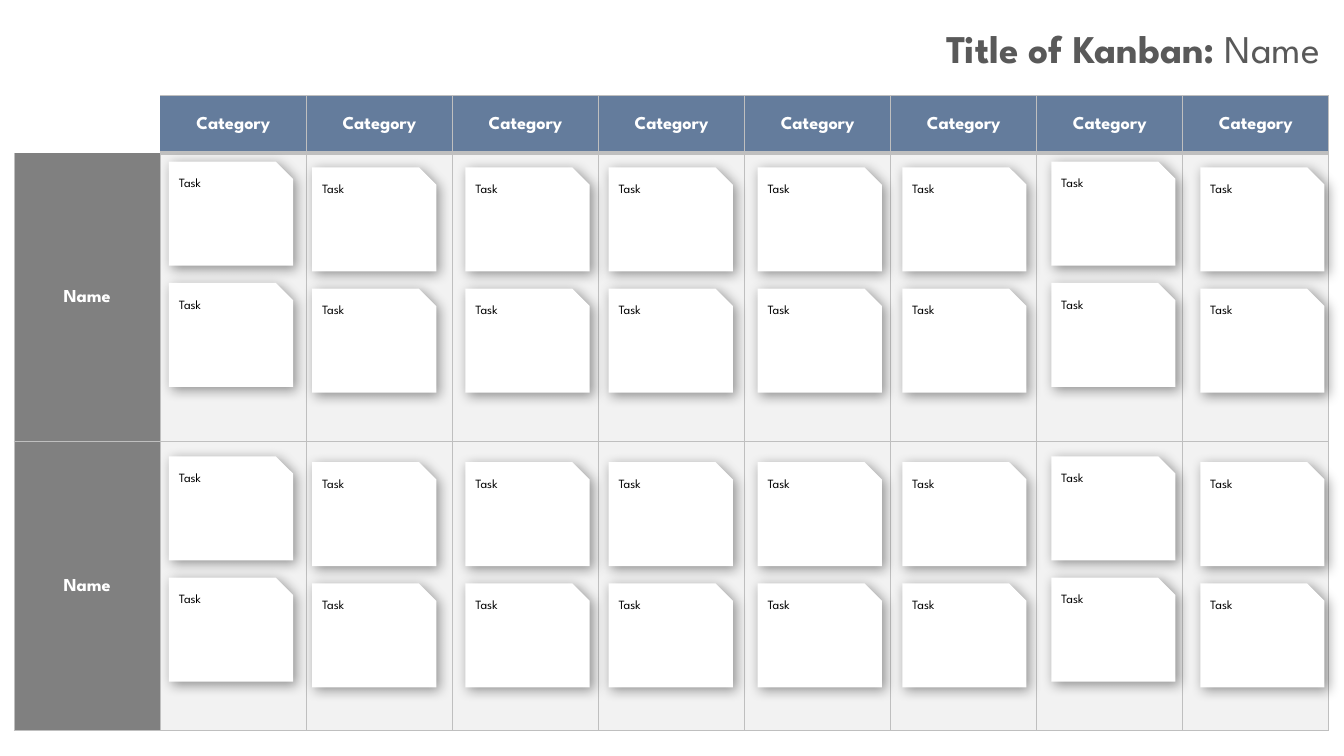
from dataclasses import dataclass

from lxml.etree import SubElement
from pptx import Presentation
from pptx.dml.color import RGBColor
from pptx.enum.shapes import MSO_SHAPE
from pptx.enum.text import MSO_ANCHOR, MSO_AUTO_SIZE, PP_ALIGN
from pptx.oxml.ns import qn
from pptx.util import Inches, Pt

COLORS = {
    "header": "647C9C",
    "name": "808080",
    "lane": "F2F2F2",
    "border": "BFBFBF",
    "title": "595959",
    "white": "FFFFFF",
    "black": "000000",
}
FONT = "League Spartan"
CATEGORIES = ["Category"] * 8
LANES = ["Name"] * 2
TASKS = ["Task"] * 2

HEADER_SHARE = 0.09  # of the board height
# Card measures are shares of a column's width or a lane's height.
CARD_WIDTH, CARD_HEIGHT, CARD_PITCH = 0.85, 0.36, 0.42
CARD_INDENTS = [0.06, 0.04, 0.09, 0.07, 0.09, 0.08, 0.10, 0.12]
CARD_DROPS = [0.03, 0.05, 0.05, 0.05, 0.05, 0.05, 0.03, 0.05]
LANE_DROP = 0.02


@dataclass
class Box:
    left: float
    top: float
    width: float
    height: float

    def inner_box(self, left, top, width, height):
        """Return the box covering the given shares of this one."""
        return Box(self.left + left * self.width, self.top + top * self.height,
                   width * self.width, height * self.height)

    def inches(self):
        return [Inches(value) for value in (self.left, self.top, self.width, self.height)]


def rgb(name):
    return RGBColor.from_string(COLORS[name])


def set_format(target, values):
    for name, value in values.items():
        setattr(target, name, value)


def add_run(paragraph, text, color, **font_values):
    run = paragraph.add_run()
    run.text = text
    set_format(run.font, {"name": FONT, **font_values})
    run.font.color.rgb = rgb(color)


def add_title(slide, box):
    text_box = slide.shapes.add_textbox(*box.inches())
    set_format(text_box.text_frame, {"word_wrap": True,
                                     "auto_size": MSO_AUTO_SIZE.SHAPE_TO_FIT_TEXT})
    paragraph = text_box.text_frame.paragraphs[0]
    paragraph.alignment = PP_ALIGN.RIGHT
    add_run(paragraph, "Title of Kanban: ", "title", size=Pt(28), bold=True)
    add_run(paragraph, "Name", "title", size=Pt(28), bold=False)


def border_widths(row, column):
    """Return the point width of each edge; zero leaves the edge open."""
    if row == column == 0:
        return {"L": 0, "R": 0, "T": 0, "B": 0}
    return {
        "L": 0 if (row, column) == (0, 1) else 1,
        "R": 1,
        "T": {0: 1, 1: 3 if column else 0}.get(row, 1),
        "B": 3 if row == 0 else 1,
    }


def set_borders(cell, widths):
    properties = cell._tc.get_or_add_tcPr()
    for side, width in widths.items():
        line = SubElement(properties, qn(f"a:ln{side}"), w=str(Pt(width)))
        if width:
            fill = SubElement(line, qn("a:solidFill"))
            SubElement(fill, qn("a:srgbClr"), val=COLORS["border"])
        else:
            SubElement(line, qn("a:noFill"))


def fill_cell(cell, text, color):
    cell.fill.solid()
    cell.fill.fore_color.rgb = rgb(color)
    if text:
        set_format(cell, {"vertical_anchor": MSO_ANCHOR.MIDDLE,
                          "margin_left": Inches(0.01), "margin_right": Inches(0.01),
                          "margin_top": Inches(0.01), "margin_bottom": 0})
        paragraph = cell.text_frame.paragraphs[0]
        paragraph.alignment = PP_ALIGN.CENTER
        add_run(paragraph, text, "white", size=Pt(13), bold=True)


def add_board(slide, box):
    rows = [[("", "white")] + [(category, "header") for category in CATEGORIES]]
    rows += [[(lane, "name")] + [("", "lane")] * len(CATEGORIES) for lane in LANES]
    table = slide.shapes.add_table(len(rows), len(rows[0]), *box.inches()).table
    set_format(table, {"first_row": False, "horz_banding": False})
    for column in table.columns:
        column.width = Inches(box.width / len(rows[0]))
    lane_share = (1 - HEADER_SHARE) / len(LANES)
    for index, row in enumerate(rows):
        table.rows[index].height = Inches(box.height * (lane_share if index else HEADER_SHARE))
        for column, (text, color) in enumerate(row):
            cell = table.cell(index, column)
            set_borders(cell, border_widths(index, column))
            fill_cell(cell, text, color)


def add_shadow(shape):
    shape.shadow.inherit = False
    effects = shape._element.spPr.find(qn("a:effectLst"))
    shadow = SubElement(effects, qn("a:outerShdw"), blurRad=str(Pt(9)), dist=str(Pt(3)),
                        dir=str(45 * 60000), algn="tl", rotWithShape="0")
    color = SubElement(shadow, qn("a:srgbClr"), val=COLORS["black"])
    SubElement(color, qn("a:alpha"), val="40000")


def add_card(slide, box, text):
    card = slide.shapes.add_shape(MSO_SHAPE.SNIP_1_RECTANGLE, *box.inches())
    card.fill.solid()
    card.fill.fore_color.rgb = rgb("white")
    card.line.fill.background()
    add_shadow(card)
    set_format(card.text_frame, {"word_wrap": True, "vertical_anchor": MSO_ANCHOR.TOP})
    paragraph = card.text_frame.paragraphs[0]
    paragraph.alignment = PP_ALIGN.LEFT
    add_run(paragraph, text, "black", size=Pt(9))


def add_cards(slide, board):
    """Stack the task cards in every lane and category of the board."""
    column_share = 1 / (len(CATEGORIES) + 1)
    lane_share = (1 - HEADER_SHARE) / len(LANES)
    for column, (indent, drop) in enumerate(zip(CARD_INDENTS, CARD_DROPS), start=1):
        for lane in range(len(LANES)):
            cell = board.inner_box(column * column_share, HEADER_SHARE + lane * lane_share,
                                   column_share, lane_share)
            for position, task in enumerate(TASKS):
                top = drop + lane * LANE_DROP + position * CARD_PITCH
                add_card(slide, cell.inner_box(indent, top, CARD_WIDTH, CARD_HEIGHT), task)


def main():
    presentation = Presentation()
    set_format(presentation, {"slide_width": Inches(13.33), "slide_height": Inches(7.5)})
    slide = presentation.slides.add_slide(presentation.slide_layouts[6])
    board = Box(0.14, 0.95, 13.04, 6.3)
    add_board(slide, board)
    add_title(slide, Box(5.11, 0.19, 8.08, 0.57))
    add_cards(slide, board)
    presentation.save("out.pptx")


if __name__ == "__main__":
    main()
